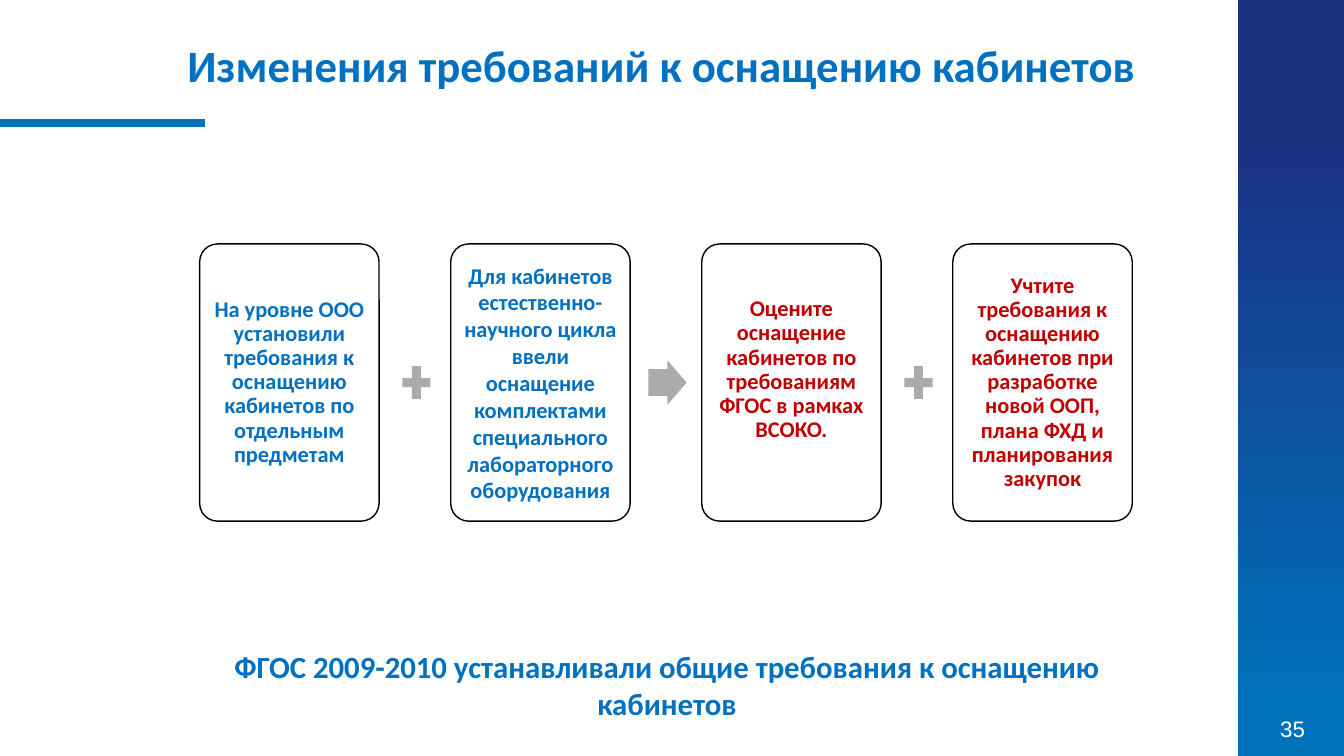
"""Build the slide on changed requirements for classroom equipment."""
from dataclasses import dataclass

from lxml.etree import SubElement
from pptx import Presentation
from pptx.dml.color import RGBColor
from pptx.enum.shapes import MSO_CONNECTOR, MSO_SHAPE
from pptx.enum.text import MSO_ANCHOR, PP_ALIGN
from pptx.oxml.ns import qn
from pptx.util import Inches, Pt


@dataclass(frozen=True)
class Theme:
    """Colours, fonts and type sizes of the slide."""
    blue: RGBColor = RGBColor(0x00, 0x70, 0xC0)
    red: RGBColor = RGBColor(0xC0, 0x00, 0x00)
    band_light: RGBColor = RGBColor(0x00, 0x72, 0xBC)
    band_dark: RGBColor = RGBColor(0x1B, 0x32, 0x81)
    grey: RGBColor = RGBColor(0xAB, 0xAB, 0xAB)
    white: RGBColor = RGBColor(0xFF, 0xFF, 0xFF)
    black: RGBColor = RGBColor(0x00, 0x00, 0x00)
    font: str = "Calibri"
    number_font: str = "Arial"
    title_size: int = 32
    footer_size: int = 22
    body_size: int = 16


THEME = Theme()

CARD_LEFT, CARD_TOP, CARD_WIDTH, CARD_HEIGHT = 1.98, 2.42, 1.78, 2.75
CARD_PITCH = 2.49
CARD_INSET = 0.07
SIGN_OFFSET, SIGN_WIDTH, SIGN_HEIGHT = 1.96, 0.38, 0.44

CARDS = [
    ("На уровне ООО установили требования к оснащению кабинетов по отдельным предметам",
     THEME.blue, 0.9, CARD_INSET),
    ("Для кабинетов\nестественно-научного цикла ввели оснащение комплектами "
     "специального лабораторного оборудования", THEME.blue, 1.0, CARD_INSET),
    ("Оцените оснащение кабинетов по требованиям ФГОС в рамках ВСОКО.",
     THEME.red, 0.9, 0.32),
    ("Учтите требования к оснащению кабинетов при разработке новой ООП, "
     "плана ФХД и планирования закупок", THEME.red, 0.9, CARD_INSET),
]
SIGNS = [MSO_SHAPE.MATH_PLUS, MSO_SHAPE.RIGHT_ARROW, MSO_SHAPE.MATH_PLUS]


def write_text(frame, text, size, color, align=PP_ALIGN.CENTER, bold=True,
               font=THEME.font, line_spacing=1.0):
    """Fill a text frame with evenly formatted paragraphs."""
    frame.word_wrap = True
    frame.text = text
    for paragraph in frame.paragraphs:
        paragraph.alignment = align
        paragraph.line_spacing = line_spacing
        for run in paragraph.runs:
            run.font.name = font
            run.font.size = Pt(size)
            run.font.bold = bold
            run.font.color.rgb = color


def add_label(slide, box, text, size, color, anchor=MSO_ANCHOR.TOP, **style):
    """Add a free-standing text box."""
    frame = slide.shapes.add_textbox(*map(Inches, box)).text_frame
    frame.vertical_anchor = anchor
    write_text(frame, text, size, color, **style)


def add_plain_shape(slide, preset, box):
    """Add a preset shape without shadow or outline."""
    shape = slide.shapes.add_shape(preset, *map(Inches, box))
    shape.shadow.inherit = False
    shape.line.fill.background()
    return shape


def add_side_band(slide):
    """Add the gradient band at the right edge."""
    band = add_plain_shape(slide, MSO_SHAPE.RECTANGLE, (12.28, 0, 1.05, 7.5))
    band.fill.gradient()
    band.fill.gradient_angle = 90
    stops = [(0.06, THEME.band_light), (0.82, THEME.band_dark)]
    for stop, (position, color) in zip(band.fill.gradient_stops, stops):
        stop.position = position
        stop.color.rgb = color


def add_title_rule(slide):
    """Add the thick line under the title."""
    rule = slide.shapes.add_connector(
        MSO_CONNECTOR.STRAIGHT, Inches(0), Inches(1.22), Inches(2.03), Inches(1.22))
    rule.line.color.rgb = THEME.band_light
    rule.line.width = Pt(6)
    SubElement(rule.line._get_or_add_ln().getparent(), qn("a:effectLst"))


def add_card(slide, left, text, color, line_spacing, bottom_inset):
    """Add one outlined card with centred text."""
    card = add_plain_shape(slide, MSO_SHAPE.ROUNDED_RECTANGLE,
                           (left, CARD_TOP, CARD_WIDTH, CARD_HEIGHT))
    card.adjustments[0] = 0.1
    card.fill.solid()
    card.fill.fore_color.rgb = THEME.white
    card.line.color.rgb = THEME.black
    card.line.width = Pt(1)
    frame = card.text_frame
    frame.vertical_anchor = MSO_ANCHOR.MIDDLE
    frame.margin_left = frame.margin_right = frame.margin_top = Inches(CARD_INSET)
    frame.margin_bottom = Inches(bottom_inset)
    write_text(frame, text, THEME.body_size, color, line_spacing=line_spacing)


def add_sign(slide, left, preset):
    """Add the grey sign between two cards."""
    top = CARD_TOP + (CARD_HEIGHT - SIGN_HEIGHT) / 2
    sign = add_plain_shape(slide, preset, (left, top, SIGN_WIDTH, SIGN_HEIGHT))
    sign.fill.solid()
    sign.fill.fore_color.rgb = THEME.grey
    if preset == MSO_SHAPE.RIGHT_ARROW:
        sign.adjustments[0] = 0.6
        sign.adjustments[1] = 0.5


def main():
    """Assemble and save the slide."""
    deck = Presentation()
    deck.slide_width, deck.slide_height = Inches(13.33), Inches(7.5)
    slide = deck.slides.add_slide(deck.slide_layouts[6])

    add_side_band(slide)
    add_label(slide, (12.42, 7.02, 0.8, 0.41), "35", THEME.body_size, THEME.white,
              anchor=MSO_ANCHOR.MIDDLE, bold=False, font=THEME.number_font)
    add_title_rule(slide)
    add_label(slide, (1.76, 0.33, 9.7, 0.64), "Изменения требований к оснащению кабинетов",
              THEME.title_size, THEME.blue, align=PP_ALIGN.LEFT)
    for index, card in enumerate(CARDS):
        add_card(slide, CARD_LEFT + index * CARD_PITCH, *card)
    for index, preset in enumerate(SIGNS):
        add_sign(slide, CARD_LEFT + SIGN_OFFSET + index * CARD_PITCH, preset)
    add_label(slide, (1.54, 6.38, 10.15, 0.84),
              "ФГОС 2009-2010 устанавливали общие требования к оснащению кабинетов",
              THEME.footer_size, THEME.blue)

    deck.save("out.pptx")


if __name__ == "__main__":
    main()
